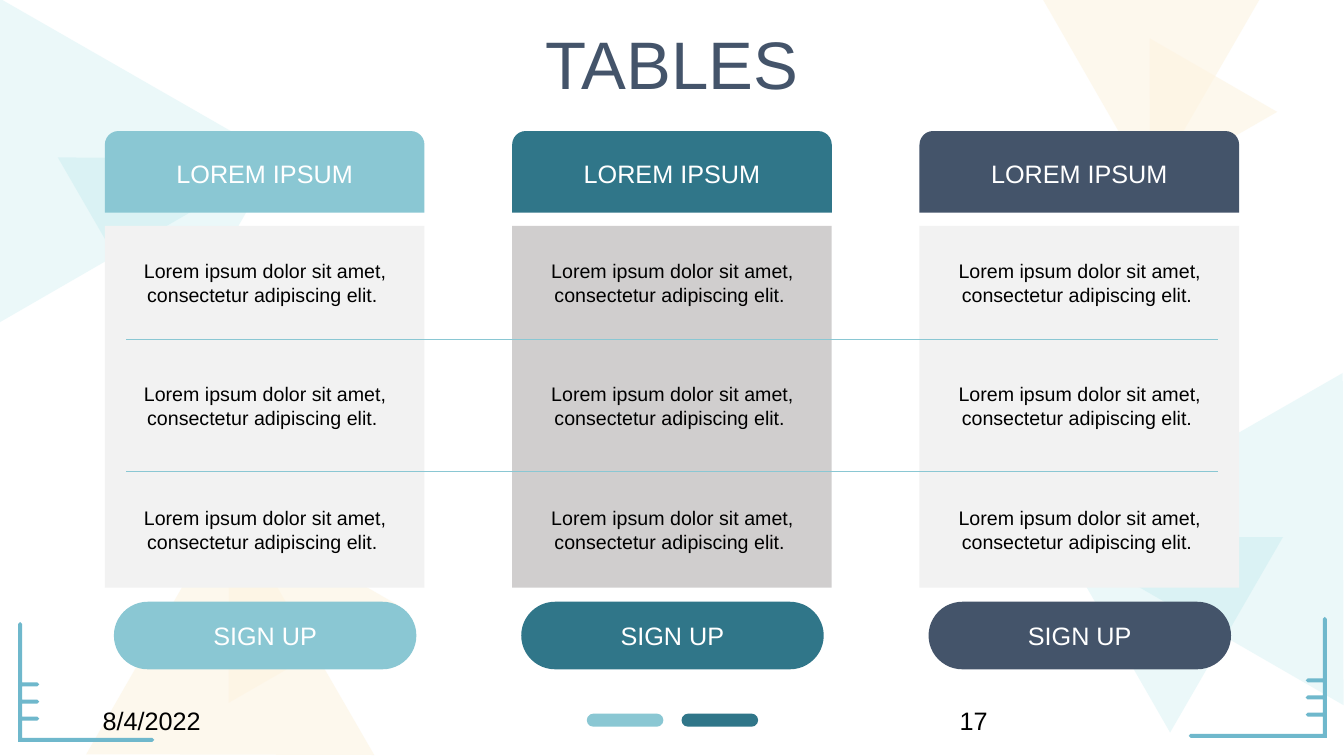
from lxml import etree
from pptx import Presentation
from pptx import util as u
from pptx.dml.color import RGBColor
from pptx.enum import shapes, text
from pptx.oxml.ns import qn

SCALE = 9144
AQUA = RGBColor(0x8A, 0xC7, 0xD3)
TEAL = RGBColor(0x30, 0x76, 0x89)
SLATE = RGBColor(0x44, 0x54, 0x6A)
PALE = RGBColor(0xF2, 0xF2, 0xF2)
GREY = RGBColor(0xD0, 0xCE, 0xCE)
MINT = RGBColor(0x85, 0xD8, 0xDE)
CREAM = RGBColor(0xFD, 0xF4, 0xE1)
SKY = RGBColor(0x6F, 0xB8, 0xCC)
WHITE = RGBColor(0xFF, 0xFF, 0xFF)
BLACK = RGBColor(0, 0, 0)

KIND = shapes.MSO_SHAPE
ALIGN = text.PP_ALIGN
ANCHOR = text.MSO_ANCHOR


def px(*sizes):
    return [u.Emu(size * SCALE) for size in sizes]


class Deck:
    font = "Arial"

    def __init__(self, wide, high):
        self.prs = Presentation()
        self.prs.slide_width, self.prs.slide_height = px(wide, high)
        self.slide = self.prs.slides.add_slide(self.prs.slide_layouts[5])
        self.items = self.slide.shapes

    def fit(self, shape, words, size, color, align, anchor):
        frame = shape.text_frame
        frame.word_wrap = True
        frame.vertical_anchor = anchor
        frame.text = words
        line = frame.paragraphs[0]
        line.alignment = align
        font = line.runs[0].font
        font.name, font.size = self.font, u.Pt(size)
        font.color.rgb = color

    def paint(self, shape, color):
        shape.shadow.inherit = False
        shape.fill.solid()
        shape.fill.fore_color.rgb = color
        shape.line.fill.background()

    def title(self, words, box):
        head = self.items.title
        head.left, head.top, head.width, head.height = px(*box)
        self.fit(head, words, 48, SLATE, ALIGN.CENTER, ANCHOR.BOTTOM)
        frame = head.text_frame
        frame.margin_left = frame.margin_right = 0
        frame.margin_top = frame.margin_bottom = 0
        frame.auto_size = text.MSO_AUTO_SIZE.NONE

    def shape(self, kind, box, color, words=None):
        item = self.items.add_shape(kind, *px(*box))
        self.paint(item, color)
        if words:
            self.fit(item, words, 18, WHITE, ALIGN.CENTER, ANCHOR.MIDDLE)
        return item

    def pill(self, box, color, words=None):
        self.shape(KIND.ROUNDED_RECTANGLE, box, color, words).adjustments[0] = 0.5

    def prism(self, box, turn, color, alpha):
        item = self.shape(KIND.ISOSCELES_TRIANGLE, box, color)
        item.rotation = turn
        tint = item._element.spPr.find(qn("a:solidFill"))[0]
        etree.SubElement(tint, qn("a:alpha"), val=str(alpha * 1000))

    def ruler(self, left, top, wide, high, side):
        dots = [(4, 2)]
        for tick in (59, 42, 25):
            y = high - tick
            dots += [(4, y), (19, y), (21, y + 2), (19, y + 4), (4, y + 4)]
        dots += [(4, high - 4), (wide - 2, high - 4), (wide, high - 2),
                 (wide - 2, high), (0, high), (0, 2), (2, 0)]
        dots = [(left + side * x, top + y) for x, y in dots]
        edge = self.items.build_freeform(*dots[0], scale=SCALE)
        edge.add_line_segments(dots[1:], close=True)
        self.paint(edge.convert_to_shape(), SKY)

    def label(self, words, box, size, align=ALIGN.LEFT, anchor=ANCHOR.TOP):
        item = self.items.add_textbox(*px(*box))
        self.fit(item, words, size, BLACK, align, anchor)

    def rule(self, left, right, y):
        line = self.items.add_connector(
            shapes.MSO_CONNECTOR.STRAIGHT, *px(left, y, right, y))
        line.line.color.rgb = AQUA
        line.line.width = u.Pt(0.5)
        etree.SubElement(line._element.spPr, qn("a:effectLst"))


def main():
    deck = Deck(1333, 750)
    mint, cream = (MINT, 16), (CREAM, 60)
    for box, turn, tone in (
        ((-92, -20, 323, 278), 330, mint),
        ((84, 110, 219, 188), 60, mint),
        ((1095, 351, 331, 285), 30, mint),
        ((1021, 485, 224, 193), 300, mint),
        ((49, 563, 287, 247), 240, cream),
        ((172, 493, 194, 167), 330, cream),
        ((1007, -47, 216, 186), 300, cream),
        ((1099, 66, 146, 126), 210, cream),
    ):
        deck.prism(box, turn, *tone)
    deck.ruler(18, 617, 135, 119, 1)
    deck.ruler(1316, 612, 137, 120, -1)

    deck.title("TABLES", (47, 21, 1239, 81))
    deck.pill((582, 708, 76, 13), AQUA)
    deck.pill((676, 708, 76, 13), TEAL)
    deck.label("8/4/2022", (92, 695, 300, 40), 18)
    deck.label("17", (942, 695, 300, 40), 18)

    plans = [(104 + 404 * i, *tones) for i, tones in enumerate(
        ((AQUA, PALE), (TEAL, GREY), (SLATE, PALE)))]
    for left, color, back in plans:
        deck.shape(KIND.ROUND_2_SAME_RECTANGLE, (left, 130, 317, 81),
                   color, "LOREM IPSUM")
        deck.shape(KIND.RECTANGLE, (left, 224, 317, 359), back)
        deck.pill((left + 9, 597, 300, 67), color, "SIGN UP")
    for y in (337, 468):
        deck.rule(125, 1208, y)
    for left, color, back in plans:
        for top in (252, 374, 497):
            deck.label("Lorem ipsum dolor sit amet, consectetur adipiscing elit. ",
                       (left + 26, top, 266, 57), 14, ALIGN.CENTER, ANCHOR.MIDDLE)
    deck.prs.save("out.pptx")


if __name__ == "__main__":
    main()
